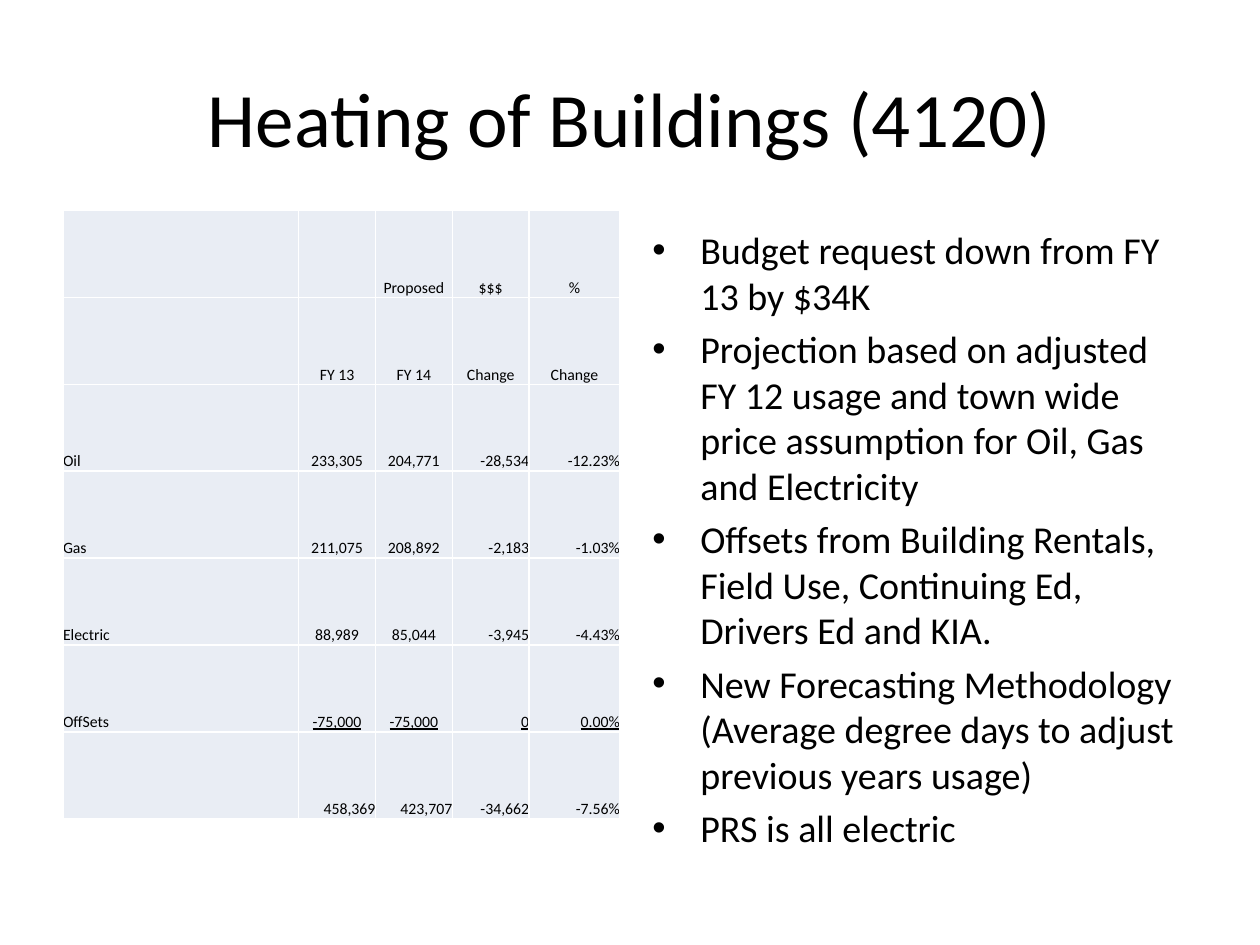
from lxml.etree import SubElement
from pptx import Presentation
from pptx.dml.color import RGBColor
from pptx.enum.text import MSO_ANCHOR as Anchor, PP_ALIGN as Align
from pptx.oxml.ns import qn
from pptx.util import Inches, Pt

BLACK = RGBColor(0x00, 0x00, 0x00)
WHITE = RGBColor(0xFF, 0xFF, 0xFF)
PALE_BLUE = RGBColor(0xE9, 0xED, 0xF4)
FONT = "Calibri"

WIDTH, HEIGHT = Inches(10), Inches(7.5)
MARGIN = Inches(0.5)
PANEL_WIDTH = Inches(4.42)
COLUMN_WIDTHS = (1.87, 0.61, 0.61, 0.61, 0.72)
ROW_HEIGHT = Inches(0.69)
HANGING_INDENT = Inches(0.38)

BUDGET = (
    ("", "", "Proposed", "$$$", "%"),
    ("", "FY 13", "FY 14", "Change", "Change"),
    ("Oil", "233,305", "204,771", "-28,534", "-12.23%"),
    ("Gas", "211,075", "208,892", "-2,183", "-1.03%"),
    ("Electric", "88,989", "85,044", "-3,945", "-4.43%"),
    ("OffSets", "-75,000", "-75,000", "0", "0.00%"),
    ("", "458,369", "423,707", "-34,662", "-7.56%"),
)
HEADER_ROWS = 2
OFFSETS_ROW = 5
TOTAL_ROW = 6

NOTES = (
    "Budget request down from FY 13 by $34K",
    "Projection based on adjusted FY 12 usage and town wide price assumption "
    "for Oil, Gas and Electricity",
    "Offsets from Building Rentals, Field Use, Continuing Ed, Drivers Ed and KIA.",
    "New Forecasting Methodology (Average degree days to adjust previous years usage)",
    "PRS is all electric",
)


def set_font(paragraph, size):
    """Apply the slide's typeface and colour at the given size."""
    paragraph.font.name = FONT
    paragraph.font.size = Pt(size)
    paragraph.font.color.rgb = BLACK


def place_title(slide, text):
    """Position and format the title placeholder."""
    title = slide.shapes.title
    title.left, title.top = MARGIN, Inches(0.3)
    title.width, title.height = WIDTH - 2 * MARGIN, Inches(1.25)
    title.text_frame.text = text
    title.text_frame.vertical_anchor = Anchor.MIDDLE
    paragraph = title.text_frame.paragraphs[0]
    paragraph.alignment = Align.CENTER
    set_font(paragraph, 44)


def add_borders(cell):
    """Draw thin white lines on all sides of a cell, ahead of its fill."""
    properties = cell._tc.get_or_add_tcPr()
    for position, side in enumerate(("lnL", "lnR", "lnT", "lnB")):
        line = SubElement(properties, qn(f"a:{side}"), w=str(Pt(1)))
        fill = SubElement(line, qn("a:solidFill"))
        SubElement(fill, qn("a:srgbClr"), val=str(WHITE))
        properties.insert(position, line)


def cell_alignment(row, column):
    """Choose the alignment from the cell's role in the budget table."""
    if column == 0:
        return Align.LEFT
    if row < HEADER_ROWS or (column < 3 and row != TOTAL_ROW):
        return Align.CENTER
    return Align.RIGHT


def format_cell(cell, text, row, column):
    """Fill one table cell with its text, colour and borders."""
    cell.text = text
    cell.vertical_anchor = Anchor.BOTTOM
    cell.margin_left = cell.margin_right = cell.margin_top = cell.margin_bottom = 0
    cell.fill.solid()
    cell.fill.fore_color.rgb = PALE_BLUE
    add_borders(cell)
    paragraph = cell.text_frame.paragraphs[0]
    paragraph.alignment = cell_alignment(row, column)
    set_font(paragraph, 9)
    if row == OFFSETS_ROW and column > 0:
        for run in paragraph.runs:
            run.font.underline = True


def add_budget_table(slide):
    """Add the heating budget table on the left."""
    table = slide.shapes.add_table(
        len(BUDGET), len(COLUMN_WIDTHS), MARGIN, Inches(1.67),
        PANEL_WIDTH, ROW_HEIGHT * len(BUDGET)).table
    for column, width in zip(table.columns, COLUMN_WIDTHS):
        column.width = Inches(width)
    for row, values in enumerate(BUDGET):
        table.rows[row].height = ROW_HEIGHT
        for column, text in enumerate(values):
            format_cell(table.cell(row, column), text, row, column)


def add_bullet(paragraph):
    """Give a paragraph a round bullet with a hanging indent."""
    properties = paragraph._p.get_or_add_pPr()
    properties.set("marL", str(HANGING_INDENT))
    properties.set("indent", str(-HANGING_INDENT))
    SubElement(properties, qn("a:buFont"), typeface="Arial")
    SubElement(properties, qn("a:buChar"), char="•")


def add_notes_list(slide):
    """Add the bulleted explanations on the right."""
    box = slide.shapes.add_textbox(
        WIDTH - MARGIN - PANEL_WIDTH, Inches(1.75), PANEL_WIDTH, Inches(4.95))
    frame = box.text_frame
    frame.word_wrap = True
    frame.text = "\n".join(NOTES)
    for paragraph in frame.paragraphs:
        paragraph.line_spacing = Pt(26.1)
        paragraph.space_before = Pt(4.2)
        add_bullet(paragraph)
        set_font(paragraph, 21.7)


def main():
    """Build and save the slide."""
    presentation = Presentation()
    presentation.slide_width, presentation.slide_height = WIDTH, HEIGHT
    slide = presentation.slides.add_slide(presentation.slide_layouts[5])
    place_title(slide, "Heating of Buildings (4120)")
    add_budget_table(slide)
    add_notes_list(slide)
    presentation.save("out.pptx")


main()
